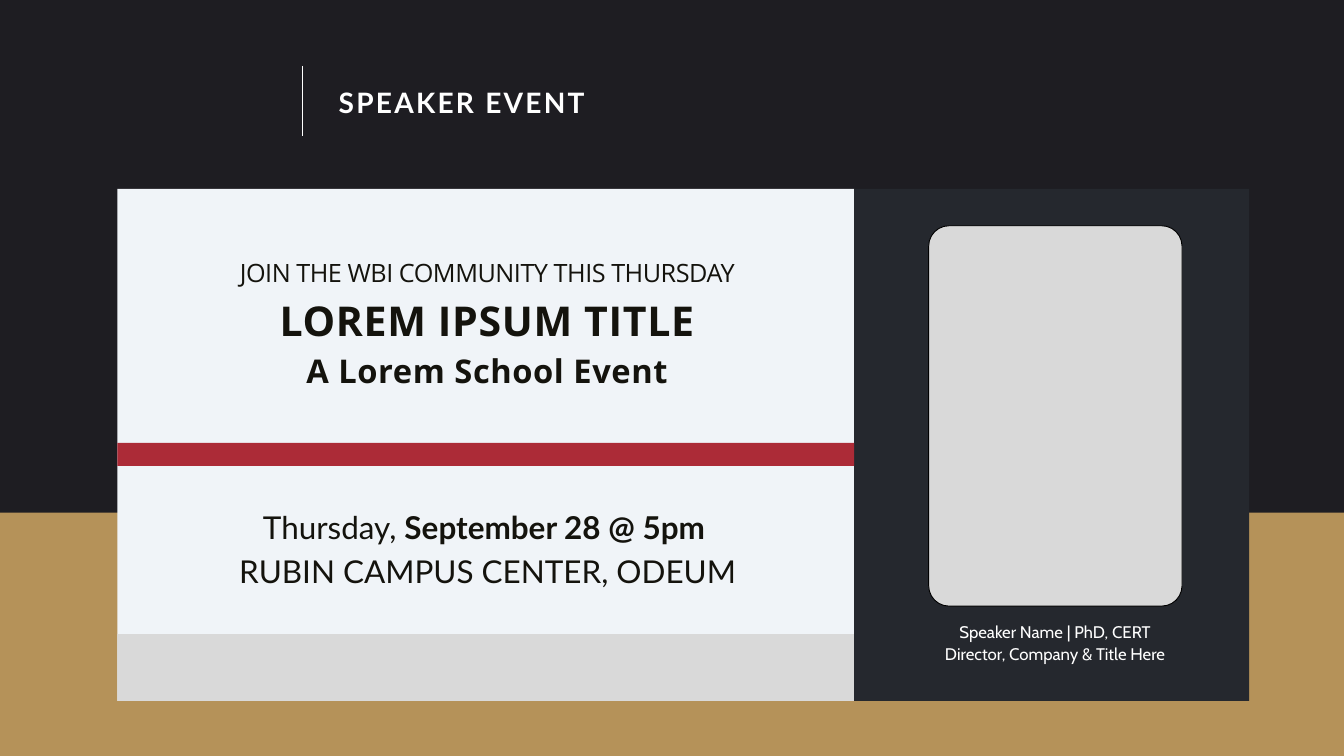
from pptx import Presentation
from pptx.dml.color import RGBColor
from pptx.enum.shapes import MSO_CONNECTOR as Link, MSO_SHAPE as Shape
from pptx.enum.text import MSO_ANCHOR as Anchor, PP_ALIGN as Align
from pptx.oxml.ns import qn
from pptx.util import Inches, Pt
from lxml.etree import SubElement

NIGHT = RGBColor(0x1E, 0x1D, 0x22)
GOLD = RGBColor(0xB5, 0x92, 0x59)
PALE = RGBColor(0xF0, 0xF4, 0xF8)
GREY = RGBColor(0xD9, 0xD9, 0xD9)
SLATE = RGBColor(0x25, 0x28, 0x2E)
RED = RGBColor(0xAC, 0x2B, 0x37)
INK = RGBColor(0x14, 0x13, 0x0D)
WHITE = RGBColor(0xFF, 0xFF, 0xFF)
BLACK = RGBColor(0, 0, 0)

COLS, ROWS = 80, 45
CELL = 0.25  # inches per grid cell


def grid(*cells):
    return [Inches(n * CELL) for n in cells]


class Poster:
    """Draws on one slide; all lengths are grid columns and rows."""

    def __init__(self, deck, back):
        self.slide = deck.slides.add_slide(deck.slide_layouts[6])
        self.shapes = self.slide.shapes
        fill = self.slide.background.fill
        fill.solid()
        fill.fore_color.rgb = back

    def block(self, x, y, w, h, color, kind=Shape.RECTANGLE, edge=None):
        box = self.shapes.add_shape(kind, *grid(x, y, w, h))
        box.shadow.inherit = False
        box.fill.solid()
        box.fill.fore_color.rgb = color
        if edge is None:
            box.line.fill.background()
        else:
            box.line.color.rgb = edge
            box.line.width = Pt(1)
        return box

    def rule(self, x, top, end, color, width):
        line = self.shapes.add_connector(Link.STRAIGHT, *grid(x, top, x, end))
        line.line.color.rgb = color
        line.line.width = Pt(width)
        SubElement(line._element.spPr, qn("a:effectLst"))

    def text(self, x, y, w, h, font, color, lines, align=Align.CENTER):
        """Each line is (size, leading, tracking, runs); a run is (words, bold)."""
        frame = self.shapes.add_textbox(*grid(x, y, w, h)).text_frame
        frame.word_wrap = True
        frame.vertical_anchor = Anchor.TOP
        frame.margin_left = frame.margin_right = 0
        frame.margin_top = frame.margin_bottom = 0
        for i, (size, lead, track, runs) in enumerate(lines):
            para = frame.add_paragraph() if i else frame.paragraphs[0]
            para.alignment = align
            para.line_spacing = Pt(lead)
            for words, bold in runs:
                run = para.add_run()
                run.text = words
                style = run.font
                style.name, style.size, style.bold = font, Pt(size), bold
                style.color.rgb = color
                if track:
                    run._r.get_or_add_rPr().set("spc", str(round(track * 100)))


def main():
    deck = Presentation()
    deck.slide_width, deck.slide_height = grid(COLS, ROWS)
    page = Poster(deck, NIGHT)

    left, top, base = 6.98, 11.25, 41.72
    split, right = 50.84, 74.36
    band, foot = 30.52, 37.74
    wide = split - left

    page.block(0, band, COLS, ROWS - band, GOLD)
    page.block(left, top, wide, base - top, PALE)
    page.block(left, foot, wide, base - foot, GREY)
    page.block(split, top, right - split, base - top, SLATE)
    page.block(left, 26.36, wide, 1.38, RED)
    page.rule(18, 3.92, 8.08, WHITE, 1.56)
    photo = page.block(55.28, 13.44, 15.08, 22.64, GREY,
                       Shape.ROUNDED_RECTANGLE, BLACK)
    photo.adjustments[0] = 0.08

    page.text(9.56, 29.88, 38.96, 5.08, "Lato", INK, [
        (33.7, 47.1, 0, [("Thursday, ", False), ("September 28 @ 5pm ", True)]),
        (33.7, 47.1, 0, [("RUBIN CAMPUS CENTER, ODEUM", False)]),
    ])
    page.text(10.12, 15, 37.76, 8.08, "Open Sans", INK, [
        (27, 37.8, -0.5, [("JOIN THE WBI COMMUNITY THIS THURSDAY", False)]),
        (44, 61.6, 0.7, [("LOREM IPSUM TITLE", True)]),
        (35, 49, 0.6, [("A Lorem School Event", True)]),
    ])
    page.text(20.16, 4.76, 28.52, 2.24, "Lato", WHITE, [
        (30.1, 42.2, 2.4, [("SPEAKER EVENT", True)]),
    ], Align.LEFT)
    page.text(52.32, 36.92, 20.96, 2.68, "Cabin", WHITE, [
        (18, 23.4, 0, [(words, False)])
        for words in ("Speaker Name | PhD, CERT",
                      "Director, Company & Title Here")
    ])
    deck.save("out.pptx")


if __name__ == "__main__":
    main()
